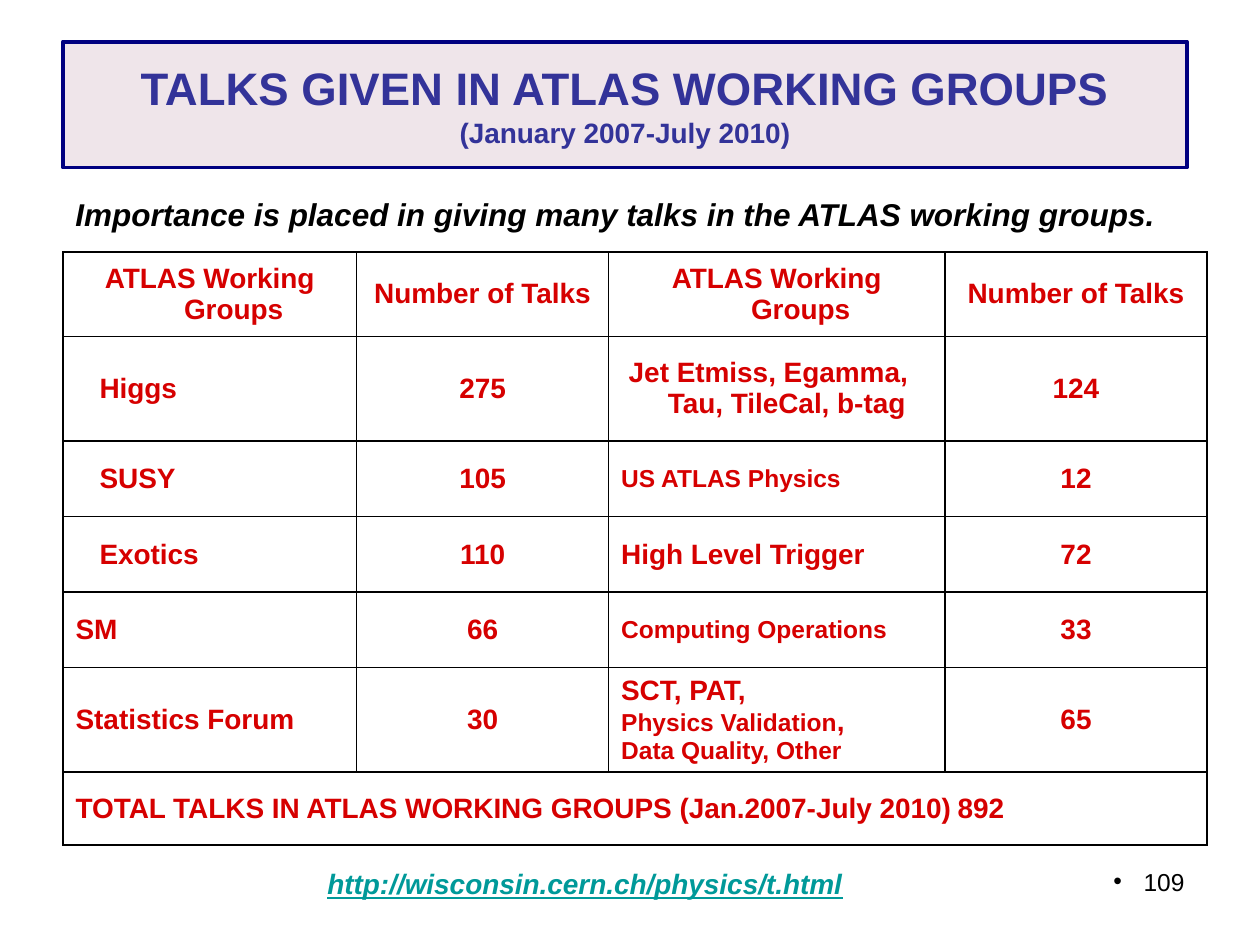
from dataclasses import dataclass
from typing import Optional

from lxml import etree
from pptx import Presentation
from pptx import util as u
from pptx.dml.color import RGBColor
from pptx.enum import text
from pptx.oxml import ns


@dataclass(frozen=True)
class Theme:
    font: str = "Arial"
    ink: str = "000000"
    title: str = "333399"
    frame: str = "000080"
    tint: str = "660033"
    table: str = "D60000"
    link: str = "009999"
    heading: int = 26
    lead: int = 18
    body: int = 16
    small: int = 14


@dataclass(frozen=True)
class Box:
    left: float
    top: float
    width: float
    height: float

    def lengths(self) -> list:
        return [u.Inches(v) for v in (self.left, self.top, self.width, self.height)]


@dataclass(frozen=True)
class Line:
    runs: tuple
    first: float = 0
    margin: float = 0.38
    tab: Optional[float] = None


THEME = Theme()
HANG = 0.38
COLUMNS = (2.33, 2, 2.67, 2.08)
ROWS = (0.67, 0.83, 0.6, 0.6, 0.6, 0.8, 0.58)
LEFT, CENTER, RIGHT = text.PP_ALIGN.LEFT, text.PP_ALIGN.CENTER, text.PP_ALIGN.RIGHT


def line(*words: str, size: int = THEME.body, first: float = 0) -> Line:
    return Line(tuple((word, size) for word in words), first)


HEADER = (line("ATLAS Working Groups"), line("Number of Talks"))
GROUPS = (
    ((line("Higgs", first=0.19),), "275",
     (line("Jet Etmiss, Egamma,", first=0.06), line("Tau, TileCal, b-tag", first=0.37)), "124"),
    ((line("SUSY", first=0.19),), "105", (line("US ATLAS Physics", size=THEME.small),), "12"),
    ((line("Exotics", first=0.19),), "110", (line("High Level Trigger"),), "72"),
    ((line("SM"),), "66", (line("Computing Operations", size=THEME.small),), "33"),
    ((line("Statistics Forum"),), "30",
     (line("SCT, PAT,"),
      Line((("Physics Validation", THEME.small), (",", THEME.body))),
      line("Data Quality, Other", size=THEME.small)), "65"),
)
TOTAL = Line(
    (("TOTAL TALKS IN ATLAS WORKING GROUPS (Jan.2007-July 2010)\t892", THEME.body),),
    margin=0, tab=7.44)


def add_text(paragraph, words: str, *, size: int, color: str, bold: bool = False,
             italic: bool = False, underline: bool = False, align=LEFT) -> None:
    paragraph.alignment = align
    run = paragraph.add_run()
    run.text = words
    font = run.font
    font.name, font.size = THEME.font, u.Pt(size)
    font.bold, font.italic, font.underline = bold, italic, underline
    font.color.rgb = RGBColor.from_string(color)


def set_indent(paragraph, margin: float, indent: float):
    properties = paragraph._p.get_or_add_pPr()
    properties.set("marL", str(u.Inches(margin)))
    properties.set("indent", str(u.Inches(indent)))
    return properties


def add_box(slide, box: Box, words: str, **style):
    frame = slide.shapes.add_textbox(*box.lengths()).text_frame
    frame.word_wrap = True
    add_text(frame.paragraphs[0], words, **style)
    return frame.paragraphs[0]


def add_title(slide) -> None:
    title = slide.shapes.title
    title.left, title.top, title.width, title.height = Box(0.5, 0.33, 8.92, 1).lengths()
    title.fill.solid()
    title.fill.fore_color.rgb = RGBColor.from_string(THEME.tint)
    color = title.fill._xPr.find(".//" + ns.qn("a:srgbClr"))
    etree.SubElement(color, ns.qn("a:alpha"), val="10000")
    title.line.color.rgb = RGBColor.from_string(THEME.frame)
    title.line.width = u.Pt(2.25)
    frame = title.text_frame
    frame.auto_size = text.MSO_AUTO_SIZE.NONE
    frame.vertical_anchor = text.MSO_ANCHOR.MIDDLE
    lines = (("TALKS GIVEN IN ATLAS WORKING GROUPS", THEME.heading),
             ("(January 2007-July 2010)", THEME.body))
    for index, (words, size) in enumerate(lines):
        paragraph = frame.add_paragraph() if index else frame.paragraphs[0]
        paragraph.space_before = u.Pt(0)
        add_text(paragraph, words, size=size, color=THEME.title, bold=True, align=CENTER)


def style_cell(cell) -> None:
    properties = cell._tc.get_or_add_tcPr()
    for side in ("lnL", "lnR", "lnT", "lnB"):
        border = etree.SubElement(properties, ns.qn(f"a:{side}"), w=str(u.Pt(1)))
        fill = etree.SubElement(border, ns.qn("a:solidFill"))
        etree.SubElement(fill, ns.qn("a:srgbClr"), val=THEME.ink)
    cell.fill.background()
    cell.vertical_anchor = text.MSO_ANCHOR.MIDDLE
    cell.margin_top = cell.margin_bottom = u.Inches(0.03)


def fill_cell(cell, lines: tuple, align=LEFT) -> None:
    frame = cell.text_frame
    for index, item in enumerate(lines):
        paragraph = frame.add_paragraph() if index else frame.paragraphs[0]
        properties = set_indent(paragraph, item.margin, item.first - item.margin)
        if item.tab is not None:
            stops = etree.SubElement(properties, ns.qn("a:tabLst"))
            etree.SubElement(stops, ns.qn("a:tab"), pos=str(u.Inches(item.tab)), algn="l")
        for words, size in item.runs:
            add_text(paragraph, words, size=size, color=THEME.table, bold=True, align=align)


def add_talks_table(slide) -> None:
    box = Box(0.5, 2, sum(COLUMNS), sum(ROWS))
    table = slide.shapes.add_table(len(ROWS), len(COLUMNS), *box.lengths()).table
    table.first_row = table.horz_banding = False
    for column, width in zip(table.columns, COLUMNS):
        column.width = u.Inches(width)
    for row, height in zip(table.rows, ROWS):
        row.height = u.Inches(height)
    for cell in table.iter_cells():
        style_cell(cell)
    for index in range(len(COLUMNS)):
        fill_cell(table.cell(0, index), (HEADER[index % 2],), CENTER)
    for row, values in enumerate(GROUPS, start=1):
        for column, value in enumerate(values):
            if column % 2:
                fill_cell(table.cell(row, column), (line(value),), CENTER)
            else:
                fill_cell(table.cell(row, column), value)
    last = len(ROWS) - 1
    table.cell(last, 0).merge(table.cell(last, len(COLUMNS) - 1))
    fill_cell(table.cell(last, 0), (TOTAL,))


def add_page_number(slide) -> None:
    paragraph = add_box(slide, Box(7.17, 6.83, 2.33, 0.52), "109",
                        size=THEME.small, color=THEME.ink, align=RIGHT)
    properties = set_indent(paragraph, 0.24, -0.24)
    etree.SubElement(properties, ns.qn("a:buFont"), typeface=THEME.font)
    etree.SubElement(properties, ns.qn("a:buChar"), char="•")


def main() -> None:
    presentation = Presentation()
    presentation.slide_width, presentation.slide_height = u.Inches(10), u.Inches(7.5)
    slide = presentation.slides.add_slide(presentation.slide_layouts[5])
    add_page_number(slide)
    add_title(slide)
    add_box(slide, Box(0.5, 1.5, 8.92, 0.42),
            "Importance is placed in giving many talks in the ATLAS working groups.",
            size=THEME.lead, color=THEME.ink, bold=True, italic=True)
    add_talks_table(slide)
    add_box(slide, Box(2.5, 6.83, 4.5, 0.37), "http://wisconsin.cern.ch/physics/t.html",
            size=THEME.body, color=THEME.link, bold=True, italic=True, underline=True)
    presentation.save("out.pptx")


if __name__ == "__main__":
    main()
